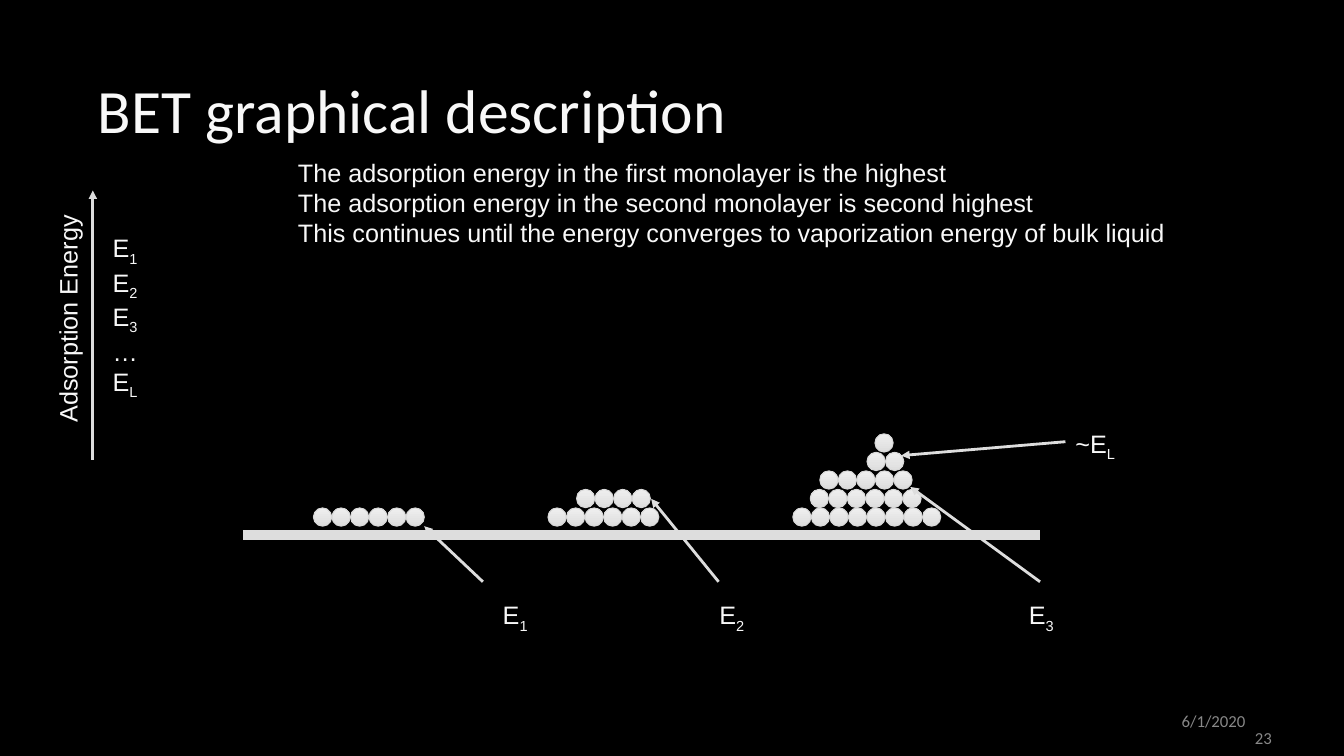
from lxml import etree
from pptx import Presentation
from pptx import util as u
from pptx.dml.color import RGBColor
from pptx.enum import shapes, text
from pptx.oxml.ns import qn

WHITE, GREY, LINE = "F8F8F8", "888888", "DDDDDD"
BALL, PITCH, FLOOR = 0.46, 0.467, 12.8


def paint(fmt, color):
    """Give a fill or line fill one solid colour."""
    fmt.solid()
    fmt.fore_color.rgb = RGBColor.from_string(color)


def draw(x1, y1, x2, y2, width, head=True):
    """Draw a straight line, with an arrowhead at its end if asked."""
    line = slide.shapes.add_connector(
        shapes.MSO_CONNECTOR.STRAIGHT, u.Cm(x1), u.Cm(y1), u.Cm(x2), u.Cm(y2))
    paint(line.line.fill, LINE)
    line.line.width = u.Pt(width)
    if head:
        etree.SubElement(line.line._get_or_add_ln(), qn("a:tailEnd"), type="triangle")
    etree.SubElement(line._element.spPr, qn("a:effectLst"))


prs = Presentation()
prs.slide_width, prs.slide_height = u.Cm(33.87), u.Cm(19.05)
slide = prs.slides.add_slide(prs.slide_layouts[6])
paint(slide.background.fill, "000000")

# Surface
draw(6.12, 13.49, 26.21, 13.49, 7, head=False)

# Piles of molecules: left edge and count of each layer, from the surface up
piles = [
    [(7.9, 6)],
    [(13.81, 6), (14.53, 4)],
    [(19.98, 8), (20.42, 6), (20.66, 5), (21.85, 2), (22.05, 1)],
]
for pile in piles:
    for layer, (left, count) in enumerate(pile):
        for i in range(count):
            ball = slide.shapes.add_shape(
                shapes.MSO_SHAPE.OVAL, u.Cm(left + i * PITCH),
                u.Cm(FLOOR - layer * PITCH), u.Cm(BALL), u.Cm(BALL))
            ball.shadow.inherit = False
            ball.fill.gradient()
            ball.fill.gradient_angle = 90
            for stop, color in zip(ball.fill.gradient_stops, (LINE, "EFEFEF")):
                stop.color.rgb = RGBColor.from_string(color)
            paint(ball.line.fill, "D8D8D8")
            ball.line.width = u.Pt(0.75)

# Energy axis, then the pointers from the labels to the layers
arrows = [
    (2.34, 11.58, 2.34, 4.8),
    (12.17, 14.66, 10.69, 13.26),
    (18.11, 14.66, 16.41, 12.57),
    (26.21, 14.66, 22.94, 12.27),
    (26.85, 11.13, 22.71, 11.48),
]
for ends in arrows:
    draw(*ends, 2)

# Texts: an underscore starts a subscript
notes = [
    "The adsorption energy in the first monolayer is the highest",
    "The adsorption energy in the second monolayer is second highest",
    "This continues until the energy converges to vaporization energy of bulk liquid",
]
labels = [
    (-1.19, 7.49, 5.79, 1.02, 270, ["Adsorption Energy"]),
    (2.59, 5.74, 1.3, 4.11, 0, ["E_1", "E_2", "E_3", "…", "E_L"]),
    (12.42, 14.99, 1.3, 1.02, 0, ["E_1"]),
    (17.88, 14.99, 1.3, 1.02, 0, ["E_2"]),
    (25.68, 14.99, 1.3, 1.02, 0, ["E_3"]),
    (26.85, 10.67, 1.6, 1.02, 0, ["~E_L"]),
    (7.26, 3.84, 22.56, 2.57, 0, notes),
]
frames = [
    (2.34, 1.02, 29.21, 3.68, 0, ["BET graphical description"]),
    (28.45, 17.83, 3.07, 0.69, 0, ["6/1/2020"]),
    (24.28, 18.26, 7.9, 0.64, 0, ["23"]),
]
left, right = text.PP_ALIGN.LEFT, text.PP_ALIGN.RIGHT
styles = [("Calibri", 44, WHITE, left), ("Calibri", 12, GREY, right),
          ("Calibri", 12, GREY, right)]
styles += [("Arial", 18, WHITE, left)] * len(labels)

for (x, y, w, h, turn, lines), (font, size, color, align) in zip(frames + labels, styles):
    box = slide.shapes.add_textbox(u.Cm(x), u.Cm(y), u.Cm(w), u.Cm(h))
    box.rotation = turn
    frame = box.text_frame
    frame.word_wrap = True
    if font == "Calibri":
        frame.vertical_anchor = text.MSO_ANCHOR.MIDDLE
        frame.margin_left = frame.margin_right = u.Cm(0.13)
    for i, line in enumerate(lines):
        para = frame.add_paragraph() if i else frame.paragraphs[0]
        para.alignment = align
        if size == 44:
            para.line_spacing = 0.9
        for k, part in enumerate(line.split("_")):
            run = para.add_run()
            run.text = part
            run.font.name, run.font.size = font, u.Pt(size)
            paint(run.font.fill, color)
            if k:
                run.font._element.set("baseline", "-25000")

prs.save("out.pptx")
